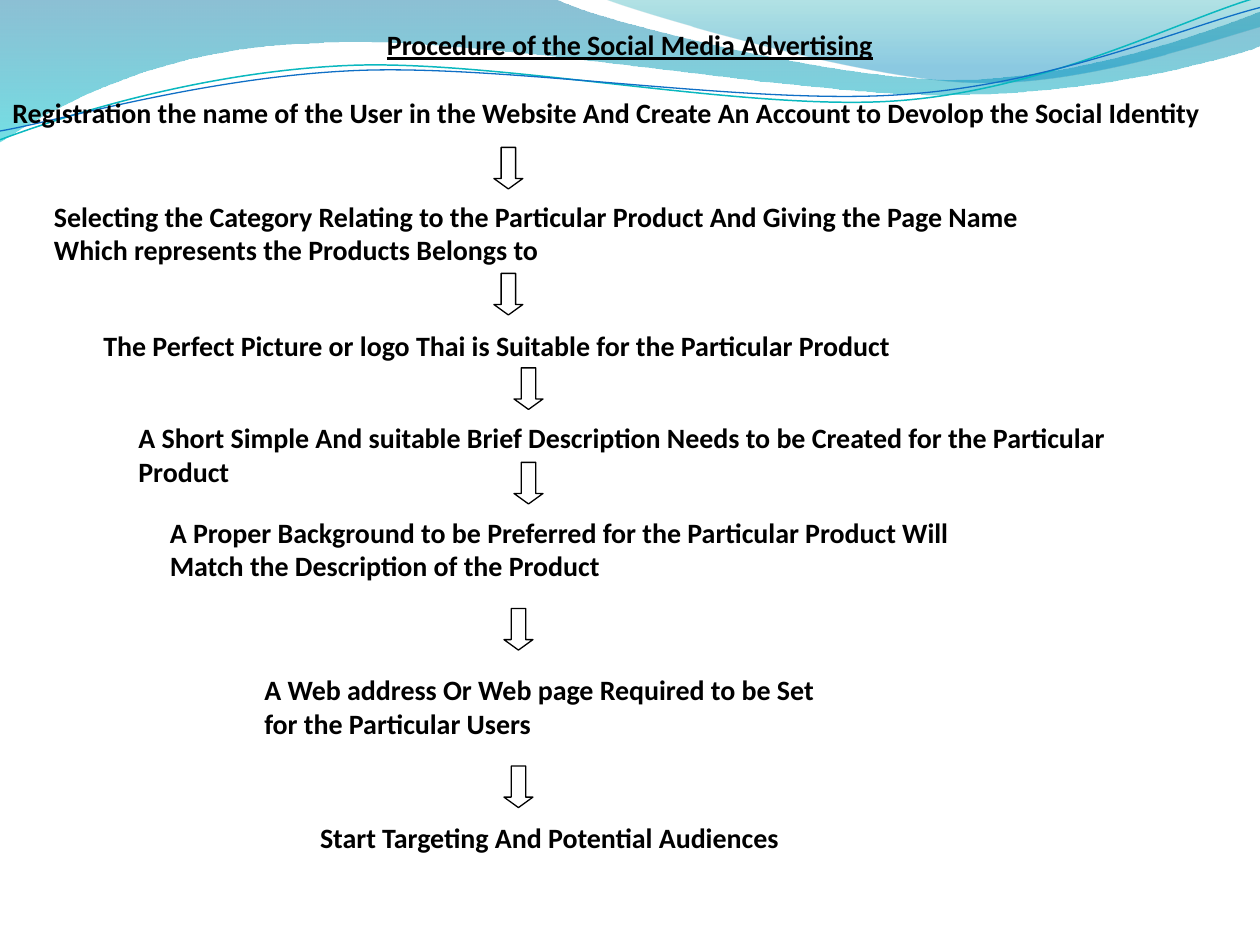
"""Build the slide on the procedure of social media advertising."""
from dataclasses import dataclass

import lxml.etree
import pptx
import pptx.dml.color
import pptx.enum.shapes
import pptx.enum.text
import pptx.oxml.ns
import pptx.util

Inches = pptx.util.Inches
Color = pptx.dml.color.RGBColor.from_string
qn = pptx.oxml.ns.qn
Point = tuple[float, float]


@dataclass(frozen=True)
class Theme:
    font: str = "Calibri"
    size: float = 16
    ink: str = "000000"
    paper: str = "FFFFFF"
    arrow_line: float = 0.75


@dataclass(frozen=True)
class Stop:
    position: float
    color: str
    opacity: int


@dataclass(frozen=True)
class Wave:
    start: Point
    segments: tuple[tuple[Point, ...], ...]
    stops: tuple[Stop, ...] = ()
    line: str = ""
    weight: float = 0


@dataclass(frozen=True)
class Step:
    left: float
    top: float
    width: float
    height: float
    paragraphs: tuple[str, ...]
    inset_top: float = 0.59
    inset_left: float = 0.1


THEME = Theme()

WAVES = (
    Wave((0, 0), (
        ((4.4, -0.01),),
        ((4.76, 0.17), (6.64, 0.63), (7.58, 0.63)),
        ((8.53, 0.63), (9.58, 0.26), (10, 0.09)),
        ((10.01, 0.36),),
        ((9.83, 0.44), (8.7, 0.76), (7.46, 0.75)),
        ((6.22, 0.75), (3.82, 0.28), (2.57, 0.34)),
        ((1.29, 0.36), (0.46, 0.83), (-0.01, 1.13)),
    ), stops=(Stop(0, "0074A1", 45), Stop(1, "00C6CF", 55))),
    Wave((4.79, -0.01), (
        ((5.09, 0.11), (6.82, 0.62), (7.69, 0.65)),
        ((8.56, 0.69), (9.61, 0.32), (10, 0.21)),
        ((10, 0),),
    ), stops=(Stop(0, "00A1A9", 30), Stop(0.8, "008BBF", 45))),
    Wave((0, 1.11), (
        ((0.48, 0.93), (1.58, 0.57), (2.77, 0.52)),
        ((3.95, 0.47), (5.93, 0.89), (7.13, 0.8)),
        ((8.33, 0.71), (9.38, 0.15), (9.98, -0.02)),
    ), line="0AB8BF", weight=0.85),
    Wave((0, 1.04), (
        ((0.47, 0.96), (1.64, 0.61), (2.83, 0.56)),
        ((4.03, 0.51), (5.97, 0.84), (7.17, 0.75)),
        ((8.36, 0.67), (9.41, 0.21), (10, 0.06)),
    ), line="0F6FC6", weight=0.75),
)

TITLE = Step(0, 0.17, 10, 0.37, ("Procedure of the Social Media Advertising",), inset_top=0.05)

STEPS = (
    Step(0, 0.71, 10, 0.64, ("Registration the name of the User in the Website And Create An Account "
                             "to Devolop the Social Identity",), inset_top=0.05),
    Step(0.33, 1.25, 9.25, 1.18, ("Selecting the Category Relating to the Particular Product "
                                  "And Giving the Page Name",
                                  "Which represents the Products Belongs to"), inset_top=0.33),
    Step(0.17, 1.75, 9.67, 1.45, ("The Perfect Picture or logo Thai is Suitable for the Particular Product",),
         inset_top=0.86, inset_left=0.65),
    Step(1, 2.75, 8.08, 1.45, ("A Short Simple And suitable Brief Description Needs to be Created "
                               "for the Particular Product",)),
    Step(1.25, 3.5, 6.83, 1.45, ("A Proper Background to be Preferred for the Particular Product Will "
                                 "Match the Description of the Product",)),
    Step(2, 4.75, 4.83, 1.45, ("A Web address Or Web page Required to be Set for the Particular Users",)),
    Step(1.08, 5.92, 6.08, 1.18, ("Start Targeting And Potential Audiences",), inset_left=1.46),
)

ARROWS: tuple[Point, ...] = ((3.92, 1.17), (4.08, 2.92), (4.08, 3.67), (4, 4.83), (4, 6.08), (3.92, 2.17))


def bend(curve, wave: Wave) -> None:
    """Turn the straight segments of a freeform into its cubic curves."""
    for straight, segment in zip(list(curve.element.iter(qn("a:lnTo"))), wave.segments):
        if len(segment) == 1:
            continue
        cubic = lxml.etree.Element(qn("a:cubicBezTo"))
        for x, y in segment:
            lxml.etree.SubElement(cubic, qn("a:pt"), x=str(Inches(x) - curve.left), y=str(Inches(y) - curve.top))
        straight.getparent().replace(straight, cubic)


def draw_wave(slide, wave: Wave):
    """Draw a gradient band or a thin curved line."""
    builder = slide.shapes.build_freeform(*map(Inches, wave.start))
    builder.add_line_segments([tuple(map(Inches, segment[-1])) for segment in wave.segments],
                              close=bool(wave.stops))
    curve = builder.convert_to_shape()
    bend(curve, wave)
    curve.shadow.inherit = False
    if not wave.stops:
        curve.fill.background()
        curve.line.color.rgb = Color(wave.line)
        curve.line.width = pptx.util.Pt(wave.weight)
        return curve
    curve.line.fill.background()
    curve.fill.gradient()
    curve.fill.gradient_angle = 270
    for target, stop in zip(curve.fill.gradient_stops, wave.stops):
        target.position = stop.position
        target.color.rgb = Color(stop.color)
    for color, stop in zip(curve.element.spPr.iter(qn("a:srgbClr")), wave.stops):
        lxml.etree.SubElement(color, qn("a:alpha"), val=str(stop.opacity * 1000))
    return curve


def draw_background(deck, slide) -> None:
    """Put the waves behind everything on the slide master."""
    master_tree = deck.slide_master.element.cSld.spTree
    for index, wave in enumerate(WAVES):
        master_tree.insert(2 + index, draw_wave(slide, wave).element)


def write_step(box, step: Step, underline: bool = False) -> None:
    """Place a box and fill it with bold paragraphs in the theme font."""
    box.left, box.top, box.width, box.height = map(Inches, (step.left, step.top, step.width, step.height))
    frame = box.text_frame
    frame.word_wrap = True
    frame.auto_size = pptx.enum.text.MSO_AUTO_SIZE.NONE
    frame.vertical_anchor = pptx.enum.text.MSO_ANCHOR.TOP
    frame.margin_top, frame.margin_left = Inches(step.inset_top), Inches(step.inset_left)
    frame.text = "\n".join(step.paragraphs)
    for paragraph in frame.paragraphs:
        font = paragraph.font
        font.name, font.size, font.bold = THEME.font, pptx.util.Pt(THEME.size), True
        font.underline = underline
        font.color.rgb = Color(THEME.ink)


def draw_arrow(slide, position: Point) -> None:
    """Draw a down arrow between two steps."""
    left, top = position
    arrow = slide.shapes.add_shape(pptx.enum.shapes.MSO_SHAPE.DOWN_ARROW,
                                   Inches(left), Inches(top), Inches(0.23), Inches(0.33))
    arrow.adjustments[0], arrow.adjustments[1] = 0.5, 0.36
    arrow.shadow.inherit = False
    arrow.fill.solid()
    arrow.fill.fore_color.rgb = Color(THEME.paper)
    arrow.line.color.rgb = Color(THEME.ink)
    arrow.line.width = pptx.util.Pt(THEME.arrow_line)


def main() -> None:
    """Build and save the presentation."""
    deck = pptx.Presentation()
    deck.slide_width, deck.slide_height = Inches(10), Inches(7.5)
    slide = deck.slides.add_slide(deck.slide_layouts.get_by_name("Title Only"))
    draw_background(deck, slide)
    for position in ARROWS:
        draw_arrow(slide, position)
    title = slide.shapes.title
    title.element.getparent().append(title.element)
    write_step(title, TITLE, underline=True)
    title.text_frame.paragraphs[0].alignment = pptx.enum.text.PP_ALIGN.CENTER
    for step in STEPS:
        write_step(slide.shapes.add_textbox(0, 0, 0, 0), step)
    deck.save("out.pptx")


if __name__ == "__main__":
    main()
